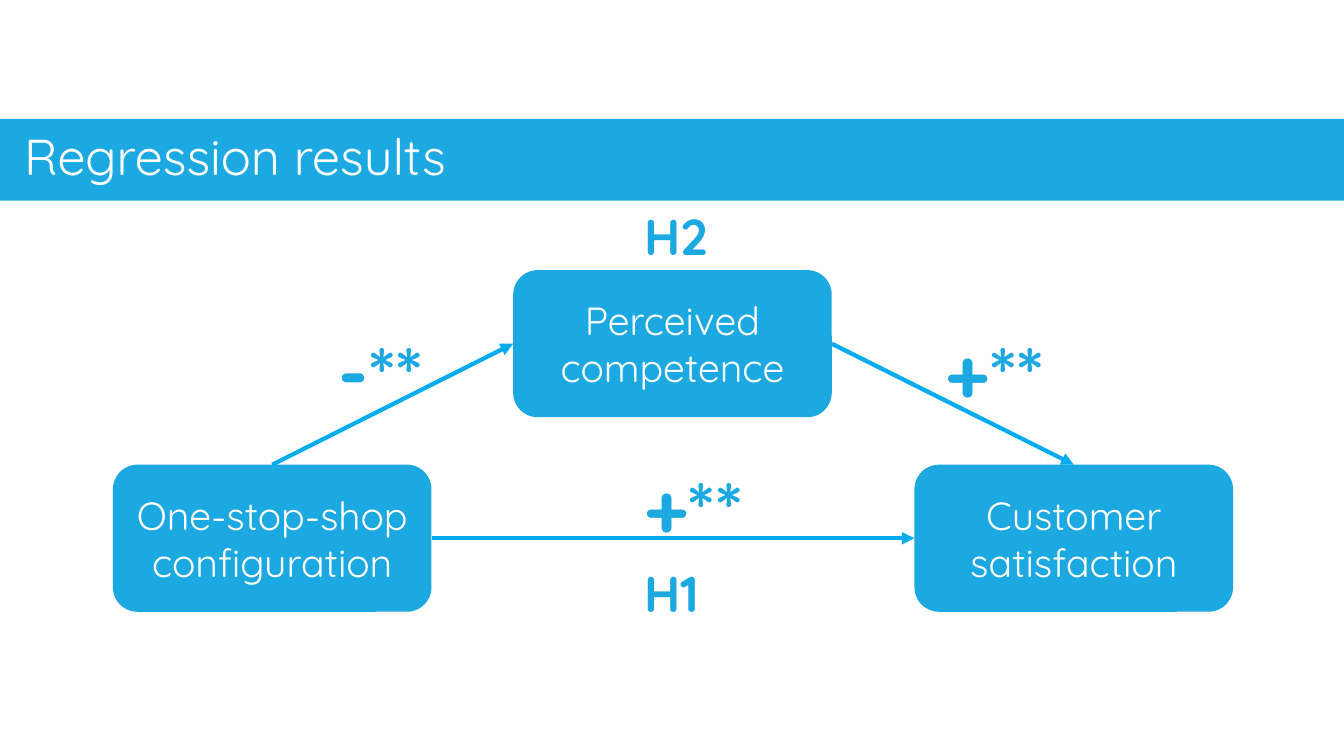
import pptx
import pptx.util
import pptx.dml.color
import pptx.enum.shapes
import pptx.enum.text
import pptx.oxml
import pptx.oxml.ns

Inches = pptx.util.Inches
Pt = pptx.util.Pt
Shape = pptx.enum.shapes.MSO_SHAPE
Align = pptx.enum.text.PP_ALIGN
Anchor = pptx.enum.text.MSO_ANCHOR
Fit = pptx.enum.text.MSO_AUTO_SIZE
qn = pptx.oxml.ns.qn

COLORS = {"blue": "1CA9E1", "line": "00ACEE", "white": "FFFFFF"}
TOP, LEFT, RIGHT = 0, 1, 3


class Deck:
    """Holds the style and the current slide."""

    font = "Quicksand"

    def __init__(self):
        self.file = pptx.Presentation()
        self.file.slide_width = Inches(13.33)
        self.file.slide_height = Inches(7.5)
        self.slide = self.file.slides.add_slide(self.file.slide_layouts[6])

    def color(self, name):
        return pptx.dml.color.RGBColor.from_string(COLORS[name])

    def apply(self, item, form):
        for key, value in form.items():
            setattr(item, key, value)

    def text(self, frame, words, size, color, bold=False, frame_form=None, par_form=None):
        self.apply(frame, {"word_wrap": True, **(frame_form or {})})
        par = frame.paragraphs[0]
        self.apply(par, par_form or {})
        run = par.add_run()
        run.text = words
        self.apply(run.font, {"name": self.font, "size": Pt(size), "bold": bold})
        run.font.color.rgb = self.color(color)

    def block(self, kind, *place):
        shape = self.slide.shapes.add_shape(kind, *map(Inches, place))
        shape.shadow.inherit = False
        shape.fill.solid()
        shape.fill.fore_color.rgb = self.color("blue")
        shape.line.fill.background()
        return shape

    def title(self, words):
        self.block(Shape.RECTANGLE, 0, 1.18, 13.33, 0.81)
        box = self.slide.shapes.add_textbox(*map(Inches, (0.14, 1.26, 10.61, 0.7)))
        self.text(box.text_frame, words, 36, "white",
                  par_form={"line_spacing": 0.9, "space_before": Pt(10)})

    def node(self, words, left, top):
        shape = self.block(Shape.ROUNDED_RECTANGLE, left, top, 3.16, 1.46)
        self.text(shape.text_frame, words, 28, "white",
                  frame_form={"vertical_anchor": Anchor.MIDDLE},
                  par_form={"alignment": Align.CENTER})
        return shape

    def label(self, words, size, *place):
        box = self.slide.shapes.add_textbox(*map(Inches, place))
        self.text(box.text_frame, words, size, "blue", True,
                  frame_form={"auto_size": Fit.SHAPE_TO_FIT_TEXT})

    def arrow(self, start, out, end, into):
        kind = pptx.enum.shapes.MSO_CONNECTOR.STRAIGHT
        link = self.slide.shapes.add_connector(kind, 0, 0, 0, 0)
        link.begin_connect(start, out)
        link.end_connect(end, into)
        link.line.color.rgb = self.color("line")
        link.line.width = Pt(3)
        props = link.element.spPr
        head = props.makeelement(qn("a:tailEnd"), {"type": "triangle"})
        props.find(qn("a:ln")).append(head)
        props.append(props.makeelement(qn("a:effectLst"), {}))


def main():
    deck = Deck()
    deck.title("Regression results")

    shop = deck.node("One-stop-shop configuration", 1.12, 4.61)
    client = deck.node("Customer satisfaction", 9.07, 4.61)
    skill = deck.node("Perceived competence", 5.09, 2.68)

    for ends in ((shop, RIGHT, client, LEFT),
                 (shop, TOP, skill, LEFT),
                 (skill, RIGHT, client, TOP)):
        deck.arrow(*ends)

    for words, left, top, width in (("+**", 6.29, 4.52, 1.63),
                                    ("+**", 9.28, 3.18, 1.59),
                                    ("-**", 3.26, 3.18, 1.27)):
        deck.label(words, 54, left, top, width, 1.01)
    for words, top in (("H1", 5.53), ("H2", 1.99)):
        deck.label(words, 36, 6.29, top, 1.1, 0.71)

    deck.file.save("out.pptx")


if __name__ == "__main__":
    main()
